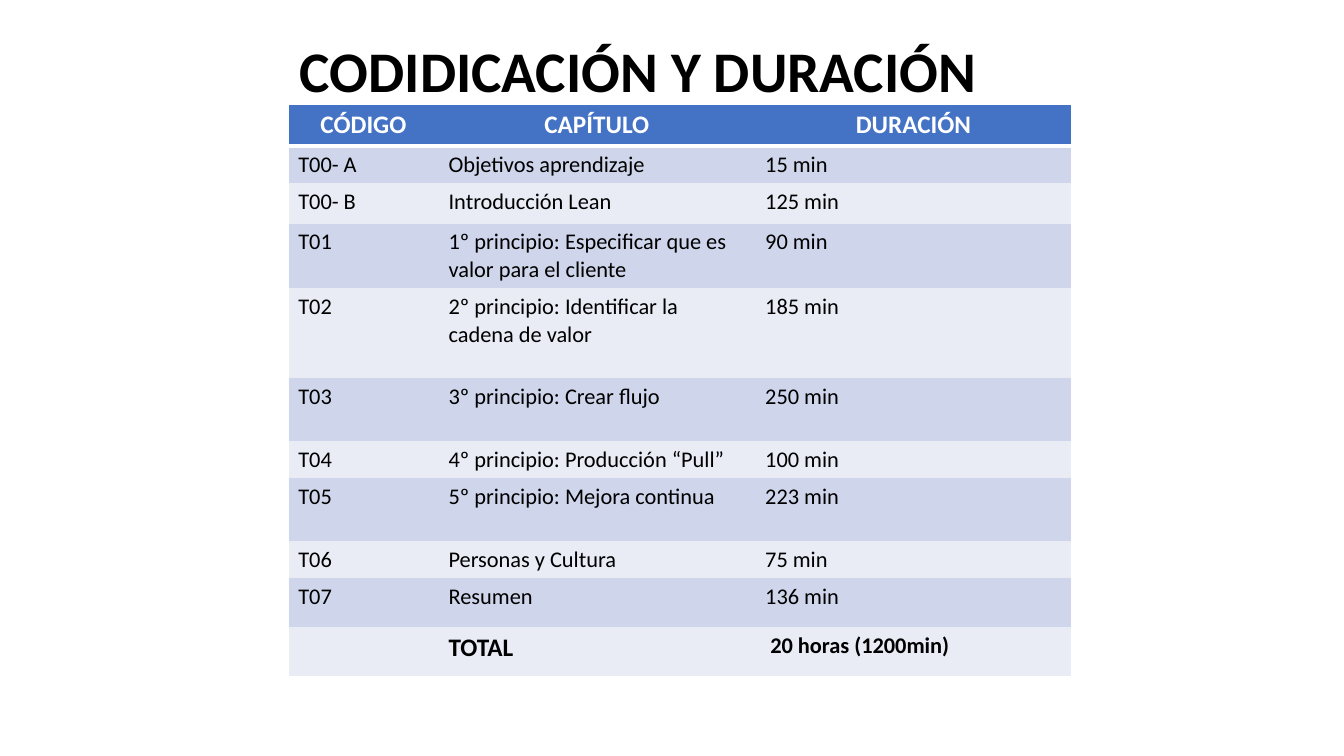
from typing import NamedTuple

from lxml import etree
from pptx import Presentation
from pptx import util as u
from pptx.dml.color import RGBColor
from pptx.enum import text
from pptx.oxml import ns

WHITE = RGBColor(0xFF, 0xFF, 0xFF)
BLACK = RGBColor(0, 0, 0)
BLUE = RGBColor(0x44, 0x72, 0xC4)
BANDS = (RGBColor(0xCF, 0xD5, 0xEA), RGBColor(0xE9, 0xEB, 0xF5))
FONT = "Calibri"
NO_STYLE = "{2D5ABB26-0587-4C30-8999-92F81FD0307C}"

WIDE, HIGH = u.Inches(13.33), u.Inches(7.5)
COLS = (11.18, 23.56, 23.56)  # percent of the slide's width


class Row(NamedTuple):
    high: float  # percent of the slide's height
    cells: tuple[str, str, str]
    sizes: tuple[int, int, int] = (16, 16, 16)
    bold: bool = False


ROWS = [
    Row(4.67, ("CÓDIGO", "CAPÍTULO", "DURACIÓN"), (18, 18, 18), True),
    Row(4.67, ("T00- A", "Objetivos aprendizaje", "15 min")),
    Row(5.33, ("T00- B", "Introducción Lean", "125 min")),
    Row(8.27, ("T01", "1º principio: Especificar que es valor para el cliente", "90 min")),
    Row(11.87, ("T02", "2º principio: Identificar la cadena de valor", "185 min")),
    Row(8.27, ("T03", "3º principio: Crear flujo", "250 min")),
    Row(4.67, ("T04", "4º principio: Producción “Pull”", "100 min")),
    Row(8.27, ("T05", "5º principio: Mejora continua", "223 min")),
    Row(4.67, ("T06", "Personas y Cultura", "75 min")),
    Row(6.53, ("T07", "Resumen", "136 min")),
    Row(6.53, ("", "TOTAL", " 20 horas (1200min)"), (16, 18, 16), True),
]


def across(share: float) -> int:
    return round(WIDE * share / 100)


def down(share: float) -> int:
    return round(HIGH * share / 100)


def style(par, size: int, color: RGBColor, bold: bool) -> None:
    for font in [par.font] + [run.font for run in par.runs]:
        font.name, font.size, font.bold = FONT, u.Pt(size), bold
        font.color.rgb = color


def edge(cell, side: str, width: float) -> None:
    props = cell._tc.get_or_add_tcPr()
    line = etree.SubElement(props, ns.qn(f"a:ln{side}"), w=str(u.Pt(width)))
    fill = etree.SubElement(line, ns.qn("a:solidFill"))
    etree.SubElement(fill, ns.qn("a:srgbClr"), val=str(WHITE))


def draw_cell(cell, row: Row, r: int, c: int) -> None:
    head, last = r == 0, r == len(ROWS) - 1
    # Borders come before the fill
    if c == 0:
        edge(cell, "L", 1)
    if c == len(COLS) - 1:
        edge(cell, "R", 1)
    if head:
        edge(cell, "T", 1)
    if head or last:
        edge(cell, "B", 3 if head else 1)
    cell.fill.solid()
    cell.fill.fore_color.rgb = BLUE if head else BANDS[(r - 1) % 2]
    cell.text_frame.text = row.cells[c]
    par = cell.text_frame.paragraphs[0]
    if head:
        par.alignment = text.PP_ALIGN.CENTER
    style(par, row.sizes[c], WHITE if head else BLACK, row.bold)


def draw_table(slide) -> None:
    frame = slide.shapes.add_table(
        len(ROWS), len(COLS), across(21.45), down(13.87),
        across(sum(COLS)), down(sum(row.high for row in ROWS)))
    table = frame.table
    table._tbl.tblPr.find(ns.qn("a:tableStyleId")).text = NO_STYLE
    for c, share in enumerate(COLS):
        table.columns[c].width = across(share)
    for r, row in enumerate(ROWS):
        table.rows[r].height = down(row.high)
        for c in range(len(COLS)):
            draw_cell(table.cell(r, c), row, r, c)


def draw_title(slide) -> None:
    box = slide.shapes.add_textbox(across(-2.48), down(5.07), WIDE, down(17.47))
    frame = box.text_frame
    frame.word_wrap = True
    frame.text = "CODIDICACIÓN Y DURACIÓN"
    par = frame.paragraphs[0]
    par.alignment = text.PP_ALIGN.CENTER
    par.line_spacing = 0.9
    style(par, 41, BLACK, True)


def main() -> None:
    deck = Presentation()
    deck.slide_width, deck.slide_height = WIDE, HIGH
    slide = deck.slides.add_slide(deck.slide_layouts[6])
    draw_table(slide)
    draw_title(slide)
    deck.save("out.pptx")


if __name__ == "__main__":
    main()
